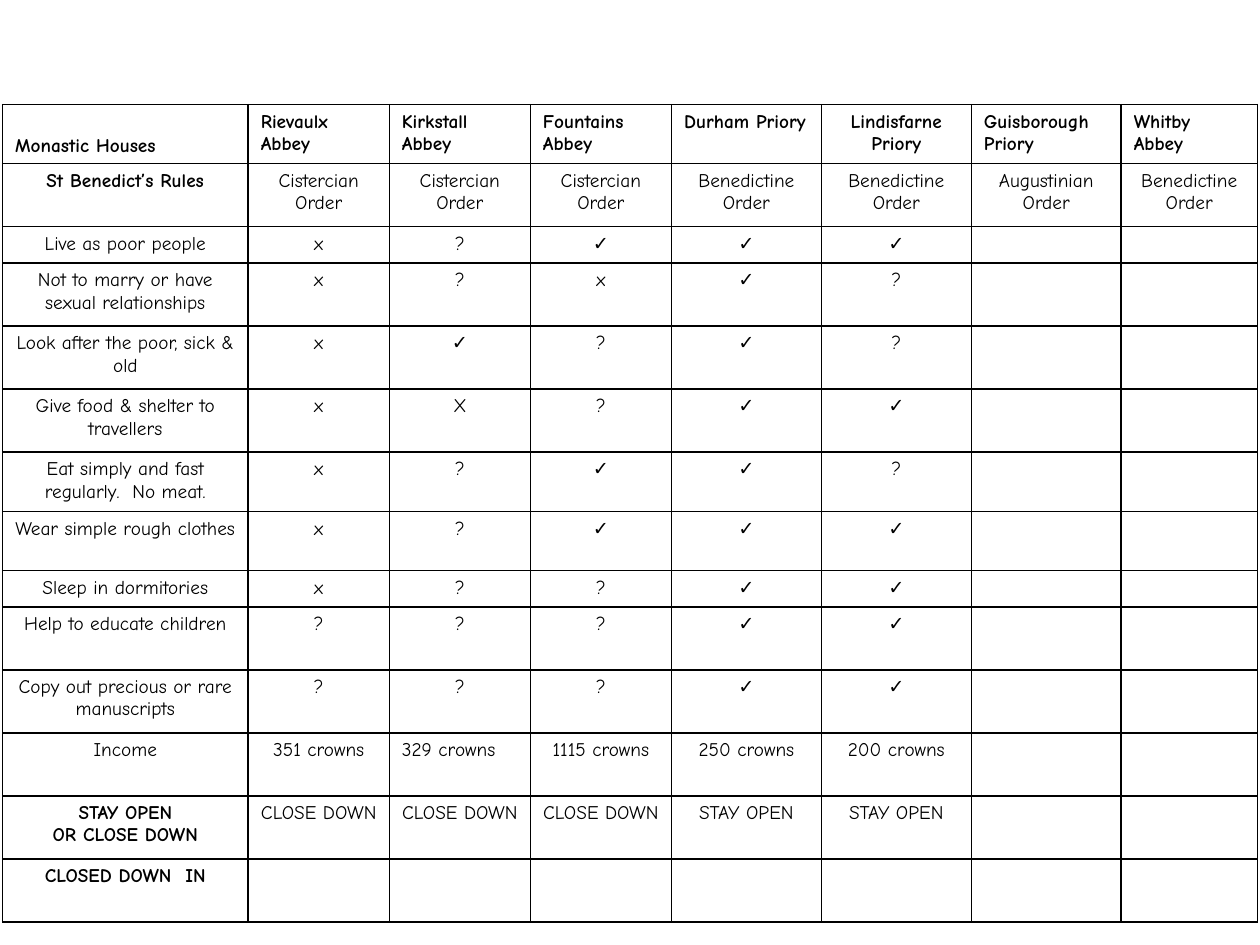
from dataclasses import dataclass

from lxml import etree
from pptx import Presentation
from pptx.dml.color import RGBColor
from pptx.enum.text import MSO_ANCHOR, PP_ALIGN
from pptx.oxml.ns import qn
from pptx.util import Inches, Pt

LEFT, CENTER = PP_ALIGN.LEFT, PP_ALIGN.CENTER
TOP, BOTTOM = MSO_ANCHOR.TOP, MSO_ANCHOR.BOTTOM


@dataclass(frozen=True)
class Theme:
    font: str = "Comic Neue"
    size: int = 11
    ink: str = "000000"
    border: float = 1


THEME = Theme()

COL_WIDTHS = [1.95] + [1.12] * 3 + [1.19] * 3 + [1.08]
SHORT, MEDIUM, TALL = 0.28, 0.47, 0.5

# Row height, then the text of each cell from the left; the rest stay empty
ROWS = [
    (MEDIUM, ["Monastic Houses", "Rievaulx Abbey", "Kirkstall Abbey", "Fountains Abbey",
              "Durham Priory", "Lindisfarne Priory", "Guisborough Priory", "Whitby Abbey"]),
    (TALL, ["St Benedict’s Rules"] + ["Cistercian Order"] * 3 + ["Benedictine Order"] * 2
           + ["Augustinian Order", "Benedictine Order"]),
    (SHORT, ["Live as poor people", *"x?✓✓✓"]),
    (TALL, ["Not to marry or have sexual relationships", *"x?x✓?"]),
    (TALL, ["Look after the poor, sick & old", *"x✓?✓?"]),
    (TALL, ["Give food & shelter to travellers", *"xX?✓✓"]),
    (MEDIUM, ["Eat simply and fast regularly.  No meat.", *"x?✓✓?"]),
    (MEDIUM, ["Wear simple rough clothes", *"x?✓✓✓"]),
    (SHORT, ["Sleep in dormitories", *"x??✓✓"]),
    (TALL, ["Help to educate children", *"???✓✓"]),
    (TALL, ["Copy out precious or rare manuscripts", *"???✓✓"]),
    (TALL, ["Income"] + [f"{n} crowns" for n in (351, 329, 1115, 250, 200)]),
    (TALL, ["STAY OPEN\nOR CLOSE DOWN"] + ["CLOSE DOWN"] * 3 + ["STAY OPEN"] * 2),
    (TALL, ["CLOSED DOWN  IN"]),
]
BOLD_LABELS = {"St Benedict’s Rules", "STAY OPEN\nOR CLOSE DOWN", "CLOSED DOWN  IN"}
LEFT_ALIGNED = {"329 crowns"}
CENTERED_HEADER = "Lindisfarne Priory"


def set_borders(cell):
    tc_pr = cell._tc.get_or_add_tcPr()
    for i, side in enumerate(("lnL", "lnR", "lnT", "lnB")):
        ln = etree.Element(qn(f"a:{side}"), w=str(Pt(THEME.border)))
        fill = etree.SubElement(ln, qn("a:solidFill"))
        etree.SubElement(fill, qn("a:srgbClr"), val=THEME.ink)
        tc_pr.insert(i, ln)


def write_cell(cell, text, bold, align, anchor):
    cell.fill.background()
    set_borders(cell)
    cell.vertical_anchor = anchor
    cell.text_frame.text = text
    font_format = {"name": THEME.font, "size": Pt(THEME.size), "bold": bold}
    for p in cell.text_frame.paragraphs:
        p.alignment = align
        for r in p.runs:
            for name, value in font_format.items():
                setattr(r.font, name, value)
            r.font.color.rgb = RGBColor.from_string(THEME.ink)
        if not p.runs:  # keeps empty cells from stretching short rows
            p._p.get_or_add_endParaRPr().set("sz", str(THEME.size * 100))


def add_monastery_table(s, left, top, width, height):
    frame = s.shapes.add_table(len(ROWS), len(COL_WIDTHS), left, top, width, height)
    table = frame.table
    table.first_row = table.horz_banding = False
    for col, col_width in zip(table.columns, COL_WIDTHS):
        col.width = Inches(col_width)
    for i, (row, (row_height, texts)) in enumerate(zip(table.rows, ROWS)):
        row.height = Inches(row_height)
        header = i == 0
        for j, cell in enumerate(row.cells):
            text = texts[j] if j < len(texts) else ""
            at_left = text != CENTERED_HEADER if header else text in LEFT_ALIGNED
            write_cell(cell, text,
                       bold=header or text in BOLD_LABELS,
                       align=LEFT if at_left else CENTER,
                       anchor=BOTTOM if header and j == 0 else TOP)


def main():
    prs = Presentation()
    prs.slide_width, prs.slide_height = Inches(10), Inches(7.5)
    s = prs.slides.add_slide(prs.slide_layouts[6])
    add_monastery_table(s, Inches(0.02), Inches(0.83), Inches(9.97), Inches(6.47))
    prs.save("out.pptx")


if __name__ == "__main__":
    main()
